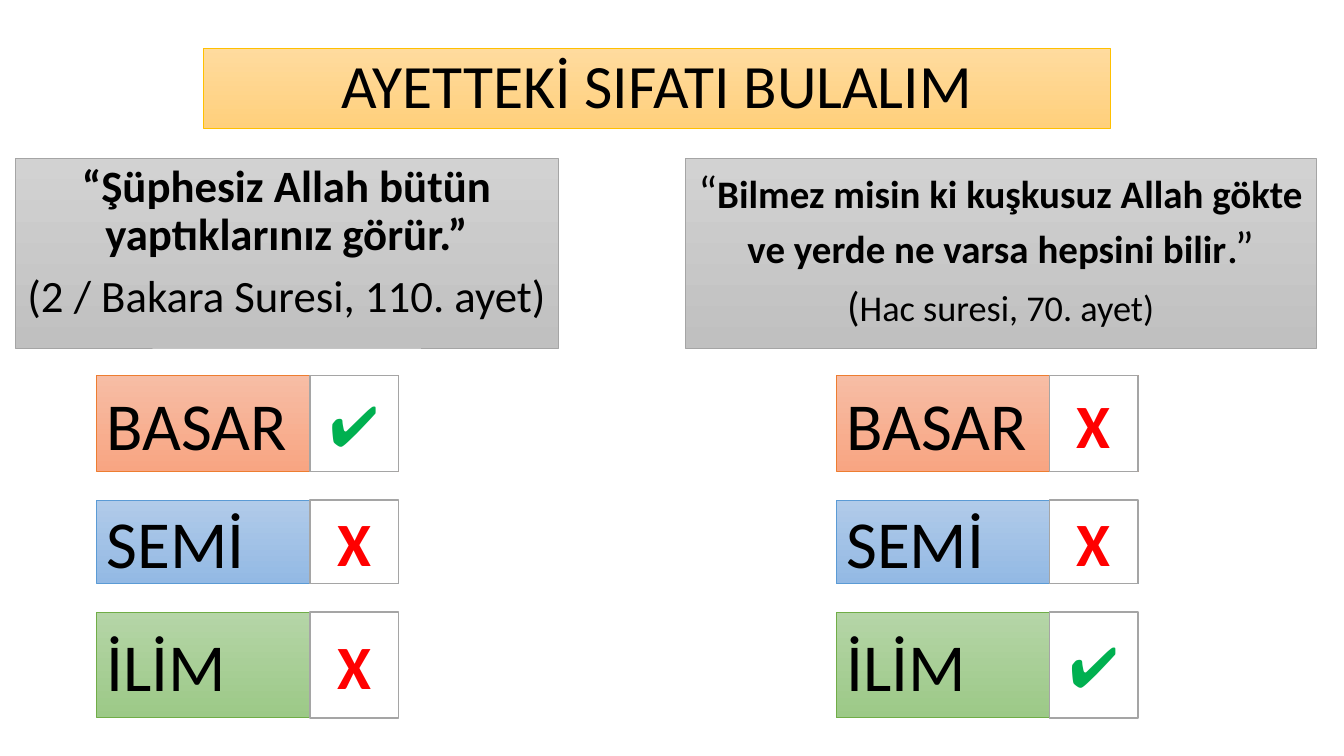
"""Builds a quiz slide that matches two verses with the attribute each one names."""
from dataclasses import dataclass

import pptx
import pptx.dml.color
import pptx.enum.shapes
import pptx.enum.text
import pptx.oxml
import pptx.util

ALIGN = pptx.enum.text.PP_ALIGN
ANCHOR = pptx.enum.text.MSO_ANCHOR


@dataclass(frozen=True)
class Theme:
    font: str = "Calibri"
    ink: str = "000000"
    paper: str = "FFFFFF"
    gold: tuple = ("FFDB9E", "FFD07C", "FFC000")
    grey: tuple = ("D2D2D2", "C0C0C0", "A5A5A5")
    orange: tuple = ("F7BDA5", "F8A582", "ED7D31")
    blue: tuple = ("B1CBE9", "93B9E4", "5B9BD5")
    green: tuple = ("B5D5A7", "9CC987", "70AD47")
    right: str = "00B050"
    wrong: str = "FF0000"
    title_size: float = 44
    verse_size: float = 32
    label_size: float = 48
    right_size: float = 40
    wrong_size: float = 44
    quote_size: float = 32.4
    quote_text_size: float = 27.8
    bracket_size: float = 29.6
    source_size: float = 25.9


class QuizSlide:
    def __init__(self, slide, theme):
        self.slide = slide
        self.theme = theme

    def place(self, shape, box):
        shape.left, shape.top, shape.width, shape.height = (
            pptx.util.Cm(side) for side in box)

    def rectangle(self, box):
        panel = self.slide.shapes.add_shape(
            pptx.enum.shapes.MSO_SHAPE.RECTANGLE, *(pptx.util.Cm(side) for side in box))
        panel.shadow.inherit = False
        return panel

    def shade(self, shape, palette):
        top, bottom, edge = palette
        shape.fill.gradient()
        shape.fill.gradient_angle = 270
        for stop, tone in zip(shape.fill.gradient_stops, (top, bottom)):
            stop.color.rgb = pptx.dml.color.RGBColor.from_string(tone)
        self.outline(shape, edge, 0.5)

    def outline(self, shape, tone, width):
        shape.line.color.rgb = pptx.dml.color.RGBColor.from_string(tone)
        shape.line.width = pptx.util.Pt(width)

    def style(self, run, size, bold=False, tone=None):
        run.font.name = self.theme.font
        run.font.size = pptx.util.Pt(size)
        run.font.bold = bold
        run.font.color.rgb = pptx.dml.color.RGBColor.from_string(tone or self.theme.ink)

    def set_words(self, shape, paragraphs, align=ALIGN.CENTER, anchor=ANCHOR.MIDDLE,
                  before=0, spacings=(1,)):
        frame = shape.text_frame
        frame.word_wrap = True
        frame.auto_size = pptx.enum.text.MSO_AUTO_SIZE.NONE
        frame.vertical_anchor = anchor
        frame.text = "\n".join("" for _ in paragraphs)
        for paragraph, pieces, spacing in zip(frame.paragraphs, paragraphs, spacings):
            paragraph.alignment = align
            paragraph.line_spacing = spacing
            paragraph.space_before = pptx.util.Pt(before)
            for words, *look in pieces:
                run = paragraph.add_run()
                run.text = words
                self.style(run, *look)

    def title(self, words, box):
        heading = self.slide.shapes.title
        self.place(heading, box)
        self.shade(heading, self.theme.gold)
        self.set_words(heading, [[(words, self.theme.title_size)]], spacings=(0.9,))

    def verse(self, shape, paragraphs, spacings):
        self.shade(shape, self.theme.grey)
        self.set_words(shape, paragraphs, anchor=ANCHOR.TOP, before=10, spacings=spacings)

    def body_verse(self, paragraphs, box):
        body = self.slide.placeholders[1]
        self.place(body, box)
        self.verse(body, paragraphs, (0.9, 0.9))
        for paragraph in body.text_frame.paragraphs:
            properties = paragraph._p.get_or_add_pPr()
            properties.set("marL", "0")
            properties.set("indent", "0")
            properties.append(pptx.oxml.parse_xml(
                '<a:buNone xmlns:a="http://schemas.openxmlformats.org/drawingml/2006/main"/>'))

    def label(self, words, palette, box):
        panel = self.rectangle(box)
        self.shade(panel, palette)
        self.set_words(panel, [[(words, self.theme.label_size)]], align=ALIGN.LEFT)

    def mark(self, correct, box):
        theme = self.theme
        answer = self.rectangle(box)
        answer.fill.solid()
        answer.fill.fore_color.rgb = pptx.dml.color.RGBColor.from_string(theme.paper)
        self.outline(answer, theme.grey[2], 1)
        piece = (("✔", theme.right_size, False, theme.right) if correct
                 else ("X", theme.wrong_size, True, theme.wrong))
        self.set_words(answer, [[piece]])


def main():
    deck = pptx.Presentation()
    deck.slide_width, deck.slide_height = pptx.util.Cm(33.87), pptx.util.Cm(19.05)
    theme = Theme()
    quiz = QuizSlide(deck.slides.add_slide(deck.slide_layouts[1]), theme)

    quiz.title("AYETTEKİ SIFATI BULALIM", (5.13, 1.22, 22.86, 2.01))
    quiz.body_verse([
        [("“Şüphesiz Allah bütün yaptıklarınız görür.”", theme.verse_size, True)],
        [("(2 / Bakara Suresi, 110. ayet)", theme.verse_size)],
    ], (0.38, 3.99, 13.69, 4.78))
    quiz.verse(quiz.rectangle((17.27, 3.99, 15.9, 4.78)), [
        [("“", theme.quote_size),
         ("Bilmez misin ki kuşkusuz Allah gökte ve yerde ne varsa hepsini bilir",
          theme.quote_text_size, True),
         (".”", theme.quote_size)],
        [("(", theme.bracket_size), ("Hac suresi, 70. ayet)", theme.source_size)],
    ], (1, 0.9))

    attributes = [
        ("BASAR", theme.orange, 9.47, 2.41),
        ("SEMİ", theme.blue, 12.6, 2.11),
        ("İLİM", theme.green, 15.42, 2.67),
    ]
    for left, answer in ((2.44, "BASAR"), (21.08, "İLİM")):
        for name, palette, top, height in attributes:
            quiz.label(name, palette, (left, top, 7.6, height))
            quiz.mark(name == answer, (left + 5.37, top, 2.23, height))

    deck.save("out.pptx")


if __name__ == "__main__":
    main()
